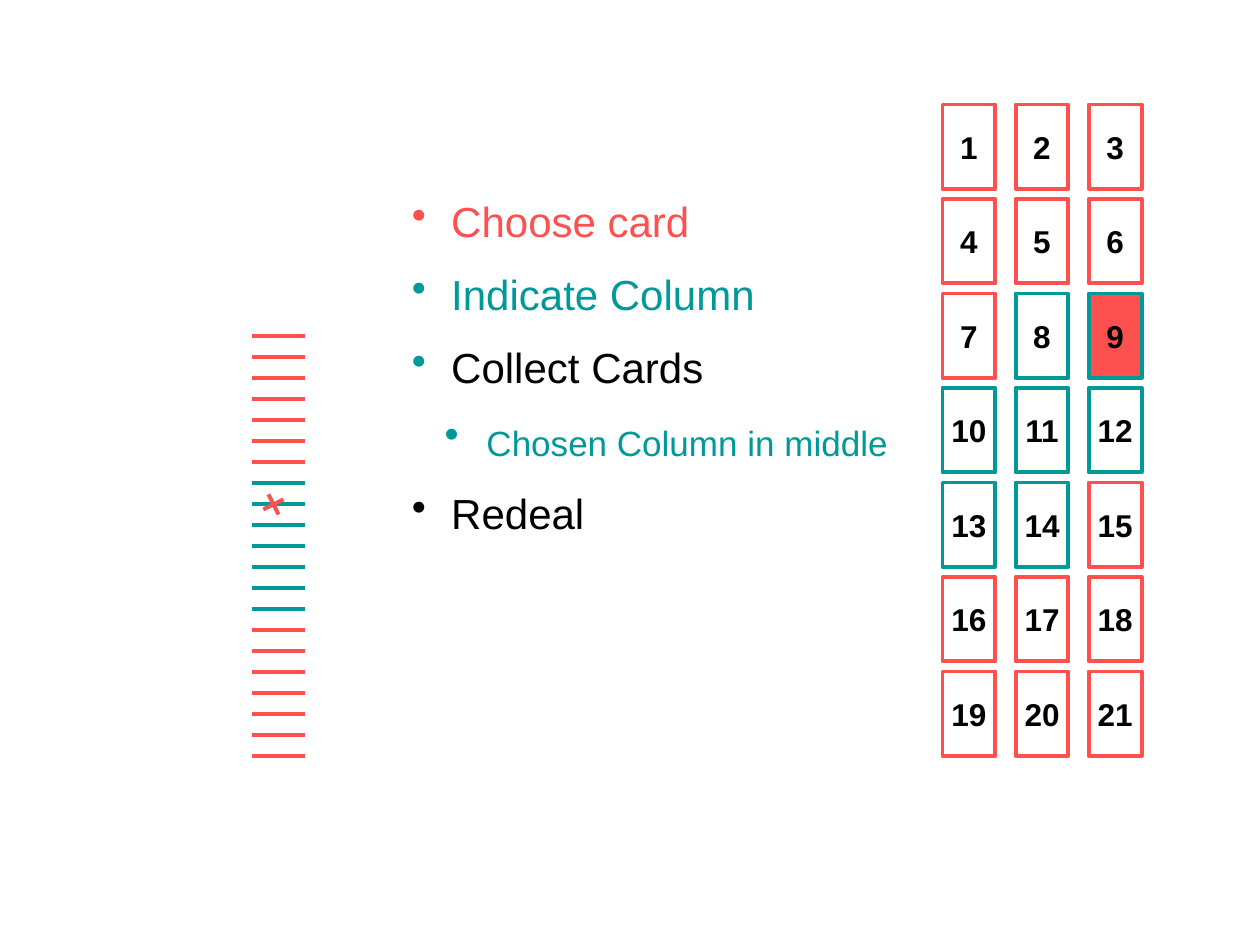
from dataclasses import dataclass

from lxml import etree
from pptx import Presentation
from pptx.dml.color import RGBColor
from pptx.enum.shapes import MSO_CONNECTOR, MSO_SHAPE
from pptx.enum.text import MSO_ANCHOR, PP_ALIGN
from pptx.oxml.ns import qn
from pptx.util import Inches, Pt

RECTANGLE = MSO_SHAPE.RECTANGLE
STRAIGHT = MSO_CONNECTOR.STRAIGHT
MIDDLE = MSO_ANCHOR.MIDDLE
CENTER = PP_ALIGN.CENTER

COLORS = {"other": "FF5050", "chosen": "009999", "ink": "000000"}
FONT = "Arial"
STROKE = Pt(2.25)

CARD_COUNT, COLUMNS = 21, 3
CHOSEN_COLUMN = range(8, 15)
CHOSEN_CARD = 9

# Card grid and collected deck, in inches
GRID_LEFT, GRID_TOP = 7.48, 0.83
COLUMN_STEP, ROW_STEP = 0.58, 0.75
CARD_WIDTH, CARD_HEIGHT = 0.42, 0.67
DECK_LEFT, DECK_TOP, DECK_STEP = 2, 2.67, 1 / 6


@dataclass(frozen=True)
class Step:
    text: str
    bullet_color: str
    text_color: str
    size: int = 24
    level: int = 0
    margin: float = 0.22
    hanging: float = 0.22


STEPS = [
    Step("Choose card", "other", "other"),
    Step("Indicate Column", "chosen", "chosen"),
    Step("Collect Cards", "chosen", "ink"),
    Step("Chosen Column in middle", "chosen", "chosen", 20, 1, 0.5, 0.24),
    Step("Redeal", "ink", "ink"),
]


def rgb(color: str) -> RGBColor:
    return RGBColor.from_string(COLORS[color])


def pile_color(number: int) -> str:
    return "chosen" if number in CHOSEN_COLUMN else "other"


def add_run(paragraph, text: str, color: str, size: int, bold: bool = False) -> None:
    run = paragraph.add_run()
    run.text = text
    run.font.color.rgb = rgb(color)
    font_format = {"name": FONT, "size": Pt(size), "bold": bold}
    for key, value in font_format.items():
        setattr(run.font, key, value)


def draw_card(slide, number: int) -> None:
    row, column = divmod(number - 1, COLUMNS)
    card = slide.shapes.add_shape(
        RECTANGLE,
        Inches(GRID_LEFT + column * COLUMN_STEP), Inches(GRID_TOP + row * ROW_STEP),
        Inches(CARD_WIDTH), Inches(CARD_HEIGHT))
    card.shadow.inherit = False
    if number == CHOSEN_CARD:
        card.fill.solid()
        card.fill.fore_color.rgb = rgb("other")
    else:
        card.fill.background()
    card.line.color.rgb = rgb(pile_color(number))
    card.line.width = STROKE
    frame_format = {"margin_left": 0, "margin_right": 0, "margin_top": 0,
                    "margin_bottom": 0, "vertical_anchor": MIDDLE, "word_wrap": True}
    for key, value in frame_format.items():
        setattr(card.text_frame, key, value)
    label = card.text_frame.paragraphs[0]
    label.alignment = CENTER
    add_run(label, str(number), "ink", 18, bold=True)


def draw_line(slide, x1: float, y1: float, x2: float, y2: float, color: str) -> None:
    line = slide.shapes.add_connector(
        STRAIGHT, Inches(x1), Inches(y1), Inches(x2), Inches(y2))
    line.line.color.rgb = rgb(color)
    line.line.width = STROKE
    etree.SubElement(line._element.spPr, qn("a:effectLst"))


def draw_steps(slide, steps: list[Step]) -> None:
    frame = slide.shapes.add_textbox(
        Inches(3.17), Inches(1.5), Inches(4.25), Inches(2.9)).text_frame
    frame.word_wrap = True
    for index, step in enumerate(steps):
        paragraph = frame.add_paragraph() if index else frame.paragraphs[0]
        paragraph.level = step.level
        if index:
            paragraph.space_before = Pt(13)
        properties = paragraph._p.get_or_add_pPr()
        properties.set("marL", str(Inches(step.margin)))
        properties.set("indent", str(-Inches(step.hanging)))
        etree.SubElement(properties, qn("a:buChar")).set("char", "•")
        # The bullet takes its colour and size from the leading space
        add_run(paragraph, " ", step.bullet_color, 24)
        add_run(paragraph, step.text, step.text_color, step.size)


def main() -> None:
    deck = Presentation()
    deck.slide_width, deck.slide_height = Inches(10), Inches(7.5)
    slide = deck.slides.add_slide(deck.slide_layouts[6])

    # Dealt cards
    for number in range(1, CARD_COUNT + 1):
        draw_card(slide, number)

    # Instructions
    draw_steps(slide, STEPS)

    # Collected deck seen from the side
    for number in range(1, CARD_COUNT + 1):
        y = DECK_TOP + (number - 1) * DECK_STEP
        draw_line(slide, DECK_LEFT, y, DECK_LEFT + CARD_WIDTH, y, pile_color(number))

    # Cross on the chosen card
    cross_x, cross_y = 2.17, DECK_TOP + (CHOSEN_CARD - 1) * DECK_STEP
    for dx, dy in ((0.08, -0.04), (-0.04, -0.08)):
        draw_line(slide, cross_x - dx, cross_y - dy, cross_x + dx, cross_y + dy, "other")

    deck.save("out.pptx")


if __name__ == "__main__":
    main()
